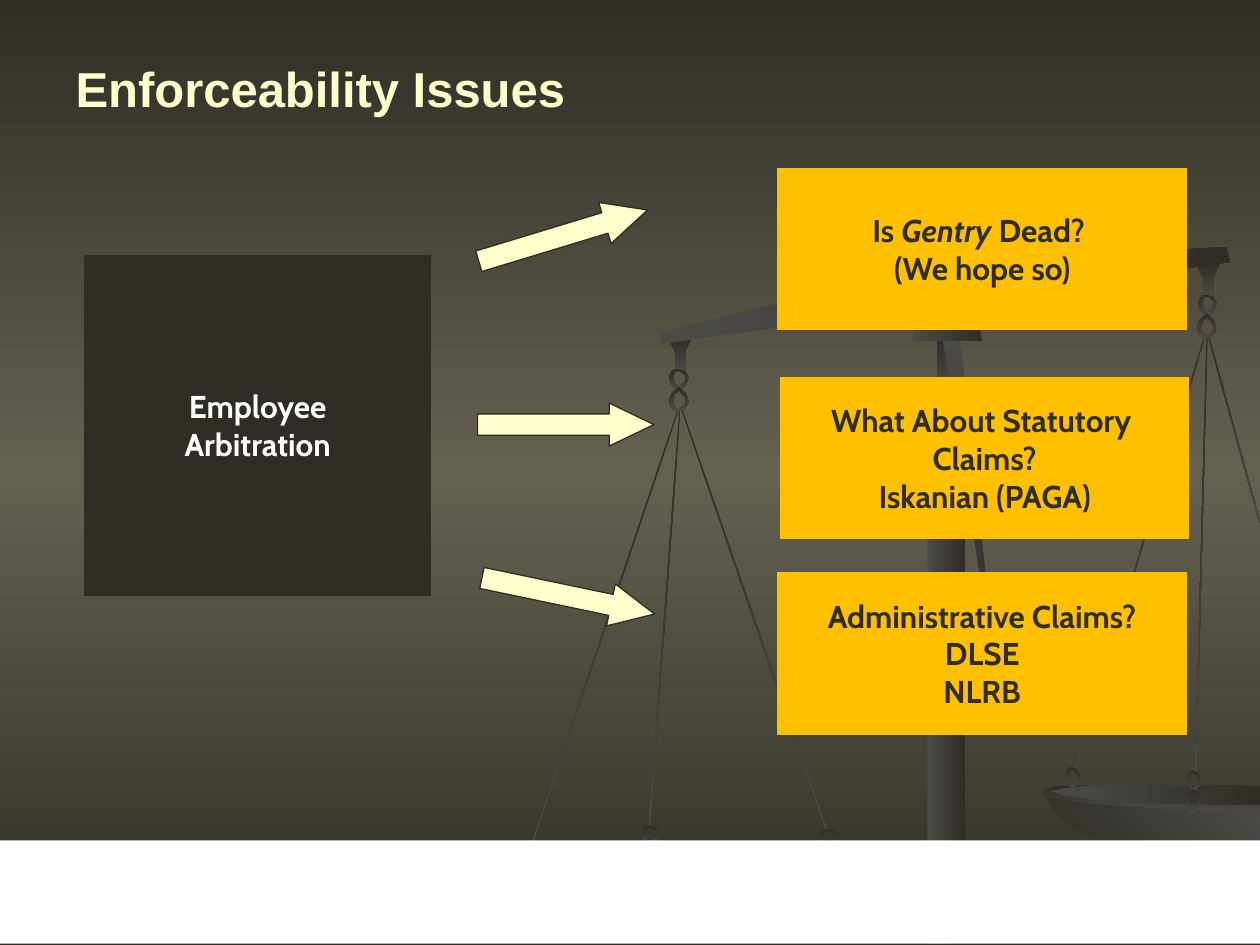
from copy import deepcopy
from dataclasses import dataclass
from typing import NamedTuple

from pptx import Presentation
from pptx.dml.color import RGBColor
from pptx.dml.fill import FillFormat
from pptx.enum.shapes import MSO_SHAPE
from pptx.enum.text import MSO_ANCHOR, PP_ALIGN
from pptx.oxml.ns import qn
from pptx.shapes.autoshape import Shape
from pptx.slide import Slide
from pptx.util import Inches, Pt

RECTANGLE = MSO_SHAPE.RECTANGLE
PROCESS = MSO_SHAPE.FLOWCHART_PROCESS
RIGHT_ARROW = MSO_SHAPE.RIGHT_ARROW
MIDDLE = MSO_ANCHOR.MIDDLE
CENTER = PP_ALIGN.CENTER
LEFT = PP_ALIGN.LEFT
TITLE_ONLY = 5


@dataclass(frozen=True)
class Theme:
    dark: RGBColor = RGBColor(0x2F, 0x2D, 0x25)
    olive: RGBColor = RGBColor(0x65, 0x61, 0x51)
    metal: RGBColor = RGBColor(0x4D, 0x4B, 0x48)
    cream: RGBColor = RGBColor(0xFF, 0xFF, 0xCC)
    amber: RGBColor = RGBColor(0xFF, 0xC0, 0x00)
    white: RGBColor = RGBColor(0xFF, 0xFF, 0xFF)
    title_font: str = "Arial"
    body_font: str = "Cabin"
    title_size: Pt = Pt(28)
    body_size: Pt = Pt(18)


THEME = Theme()
DARK_TO_METAL = (THEME.dark, THEME.metal)
METAL_TO_DARK = (THEME.metal, THEME.dark)
Contour = list[tuple[float, float]]


class Frame(NamedTuple):
    left: float
    top: float
    width: float
    height: float


class Bar(NamedTuple):
    frame: Frame
    rotation: float = 0


class Box(NamedTuple):
    frame: Frame
    lines: tuple[str, ...]
    fill: RGBColor
    text: RGBColor
    italic_word: str = ""


class Outline(NamedTuple):
    points: Contour
    colors: tuple[RGBColor, RGBColor]
    angle: float


STRINGS = [
    Bar(Frame(9.04, 2.6, 0.01, 3.6), 16.6),
    Bar(Frame(9.53, 2.66, 0.01, 3.47), 1.5),
    Bar(Frame(9.79, 2.64, 0.01, 1.53), 344.6),
    Bar(Frame(5.98, 3.15, 0.01, 3.53), 341),
    Bar(Frame(4.79, 3.16, 0.01, 3.68), 18.6),
    Bar(Frame(5.27, 3.25, 0.01, 3.31), 4.2),
]

# Contours in fractions of their frame
RING = [
    [(.5, 1), (.8, .76), (.95, .5), (1, .4), (.95, .3), (.75, .06), (.45, 0),
     (.25, 0), (.1, .12), (0, .4), (.1, .7), (.3, .88)],
    [(.5, .1), (.75, .24), (.85, .4), (.8, .55), (.5, .83), (.3, .7),
     (.2, .4), (.3, .12)],
]
FLIPPED_RING = [[(x, 1 - y) for x, y in contour] for contour in RING]
HANGER = [[(1, 0), (0, .07), (.28, .45), (.28, 1), (.72, 1), (.72, .42)]]
UPPER_LINKS = [
    Frame(8.46, 6.09, 0.11, 0.17), Frame(5.31, 2.93, 0.16, 0.17),
    Frame(9.51, 2.34, 0.15, 0.17), Frame(9.42, 6.12, 0.11, 0.17),
    Frame(5.09, 6.55, 0.15, 0.16), Frame(6.5, 6.58, 0.16, 0.17),
]
LOWER_LINKS = [Frame(5.31, 3.07, 0.16, 0.19), Frame(9.5, 2.49, 0.16, 0.19),
               Frame(9.41, 6.26, 0.12, 0.19)]
HANGERS = [Frame(5.31, 2.68, 0.18, 0.27), Frame(9.5, 2.09, 0.18, 0.27)]

PAN = [
    Outline([(9.58, 6.24), (8.65, 6.23), (8.36, 6.24), (8.27, 6.28), (8.32, 6.33),
             (8.52, 6.38), (8.94, 6.42), (9.35, 6.44), (10, 6.45), (10, 6.26)],
            DARK_TO_METAL, 90),
    Outline([(8.31, 6.33), (8.35, 6.42), (8.42, 6.49), (8.52, 6.57), (8.65, 6.63),
             (8.82, 6.68), (9.03, 6.72), (9.28, 6.74), (9.57, 6.75), (10, 6.74),
             (10, 6.43), (9.53, 6.43), (9.18, 6.42), (8.86, 6.4), (8.57, 6.37)],
            DARK_TO_METAL, 315),
    Outline([(9.56, 6.23), (8.69, 6.23), (8.43, 6.26), (8.34, 6.28), (8.43, 6.31),
             (8.63, 6.34), (8.93, 6.37), (9.33, 6.38), (10, 6.39), (10, 6.24)],
            METAL_TO_DARK, 0),
]
BEAM = Outline([(9.73, 1.96), (9.76, 2.08), (5.25, 2.73), (5.24, 2.64),
                (7.37, 2.12), (7.59, 2.09)], METAL_TO_DARK, 0)
POINTER = Outline([(7.91, 5.39), (7.5, 2.8), (7.48, 2.68), (7.6, 2.65),
                   (7.63, 2.77)], METAL_TO_DARK, 45)
CAP = Outline([(7.52, 2.47), (7.63, 2.48), (7.72, 2.53), (7.77, 2.6), (7.79, 2.71),
               (7.24, 2.71), (7.26, 2.6), (7.32, 2.53), (7.4, 2.48)],
              METAL_TO_DARK, 0)

ISSUE_SIZE = (3.25, 1.29)
BOXES = [
    Box(Frame(6.17, 1.33, *ISSUE_SIZE), ("Is Gentry Dead? ", "(We hope so)"),
        THEME.amber, THEME.dark, "Gentry"),
    Box(Frame(6.19, 2.99, *ISSUE_SIZE),
        ("What About Statutory ", "Claims?", "Iskanian (PAGA)"),
        THEME.amber, THEME.dark),
    Box(Frame(6.17, 4.54, *ISSUE_SIZE), ("Administrative Claims?", "DLSE", "NLRB"),
        THEME.amber, THEME.dark),
    Box(Frame(0.67, 2.02, 2.75, 2.71), ("Employee", "Arbitration"),
        THEME.dark, THEME.white),
]
ARROW_SIZE = (1.4, 0.34)
ARROWS = [Bar(Frame(3.77, 1.7, *ARROW_SIZE), 343.1),
          Bar(Frame(3.79, 3.2, *ARROW_SIZE)),
          Bar(Frame(3.81, 4.56, *ARROW_SIZE), 11.8)]


def fill_gradient(fill: FillFormat, colors: tuple[RGBColor, RGBColor], angle: float) -> None:
    """Fill with two colours; the angle runs clockwise."""
    fill.gradient()
    fill.gradient_angle = (360 - angle) % 360
    for stop, color in zip(fill.gradient_stops, colors):
        stop.color.rgb = color


def set_background(slide: Slide) -> None:
    """Run the gradient from dark to olive at mid-height and back to dark."""
    fill_gradient(slide.background.fill, (THEME.dark, THEME.olive), 90)
    stops = slide.element.find(".//" + qn("a:gsLst"))
    stops[1].set("pos", "50000")
    last_stop = deepcopy(stops[0])
    last_stop.set("pos", "100000")
    stops.append(last_stop)


def add_plain_shape(slide: Slide, kind: MSO_SHAPE, frame: Frame, rotation: float = 0) -> Shape:
    shape = slide.shapes.add_shape(kind, *map(Inches, frame))
    shape.rotation = rotation
    shape.shadow.inherit = False
    shape.line.fill.background()
    return shape


def add_solid_shape(slide: Slide, kind: MSO_SHAPE, frame: Frame, color: RGBColor,
                    rotation: float = 0) -> Shape:
    shape = add_plain_shape(slide, kind, frame, rotation)
    shape.fill.solid()
    shape.fill.fore_color.rgb = color
    return shape


def add_metal_bar(slide: Slide, bar: Bar, colors: tuple[RGBColor, RGBColor], angle: float) -> None:
    shape = add_plain_shape(slide, RECTANGLE, bar.frame, bar.rotation)
    fill_gradient(shape.fill, colors, angle)


def add_contours(slide: Slide, contours: list[Contour], colors: tuple[RGBColor, RGBColor],
                 angle: float) -> None:
    """Draw closed contours, in inches, as one shape; an inner contour is a hole."""
    scaled = [[(Inches(x), Inches(y)) for x, y in contour] for contour in contours]
    builder = slide.shapes.build_freeform(*scaled[0][0])
    for contour in scaled:
        builder.move_to(*contour[0])
        builder.add_line_segments(contour[1:], close=True)
    shape = builder.convert_to_shape()
    shape.shadow.inherit = False
    shape.line.fill.background()
    fill_gradient(shape.fill, colors, angle)


def add_fittings(slide: Slide, contours: list[Contour], frames: list[Frame]) -> None:
    for left, top, width, height in frames:
        placed = [[(left + x * width, top + y * height) for x, y in contour]
                  for contour in contours]
        add_contours(slide, placed, DARK_TO_METAL, 90)


def add_scales(slide: Slide) -> None:
    for string in STRINGS:
        add_metal_bar(slide, string, DARK_TO_METAL, 90)
    for outline in PAN:
        add_contours(slide, [outline.points], outline.colors, outline.angle)
    add_fittings(slide, HANGER, HANGERS)
    add_fittings(slide, RING, UPPER_LINKS)
    add_fittings(slide, FLIPPED_RING, LOWER_LINKS)
    add_contours(slide, [BEAM.points], BEAM.colors, BEAM.angle)
    add_metal_bar(slide, Bar(Frame(7.36, 3.08, 0.3, 4.41)), METAL_TO_DARK, 0)
    add_metal_bar(slide, Bar(Frame(7.44, 2.68, 0.13, 0.42)), DARK_TO_METAL, 90)
    for outline in (POINTER, CAP):
        add_contours(slide, [outline.points], outline.colors, outline.angle)


def add_box(slide: Slide, box: Box) -> None:
    text_frame = add_solid_shape(slide, PROCESS, box.frame, box.fill).text_frame
    text_frame.word_wrap = False
    text_frame.vertical_anchor = MIDDLE
    text_frame.text = "\n".join(box.lines)
    for paragraph in text_frame.paragraphs:
        paragraph.alignment = CENTER
        if box.italic_word and box.italic_word in paragraph.text:
            parts = paragraph.text.partition(box.italic_word)
            paragraph.text = parts[0]
            for part in parts[1:]:
                paragraph.add_run().text = part
        for run in paragraph.runs:
            run.font.name = THEME.body_font
            run.font.size = THEME.body_size
            run.font.bold = True
            run.font.italic = run.text == box.italic_word
            run.font.color.rgb = box.text


def add_arrow(slide: Slide, arrow: Bar) -> None:
    shape = add_solid_shape(slide, RIGHT_ARROW, arrow.frame, THEME.cream, arrow.rotation)
    shape.adjustments[1] = 1.04
    shape.line.color.rgb = THEME.dark
    shape.line.width = Pt(0.75)


def format_title(slide: Slide) -> None:
    title = slide.shapes.title
    title.left, title.top, title.width, title.height = map(Inches, (0.5, 0.3, 9, 1.25))
    text_frame = title.text_frame
    text_frame.text = "Enforceability Issues"
    text_frame.vertical_anchor = MIDDLE
    text_frame.margin_bottom = Inches(0.5)
    paragraph = text_frame.paragraphs[0]
    paragraph.alignment = LEFT
    font = paragraph.runs[0].font
    font.name, font.size, font.bold = THEME.title_font, THEME.title_size, True
    font.color.rgb = THEME.cream


def main() -> None:
    presentation = Presentation()
    presentation.slide_width, presentation.slide_height = Inches(10), Inches(7.5)
    slide = presentation.slides.add_slide(presentation.slide_layouts[TITLE_ONLY])
    set_background(slide)
    add_scales(slide)
    add_solid_shape(slide, RECTANGLE, Frame(0, 6.67, 10, 0.82), THEME.white)
    format_title(slide)
    for box in BOXES:
        add_box(slide, box)
    for arrow in ARROWS:
        add_arrow(slide, arrow)
    presentation.save("out.pptx")


if __name__ == "__main__":
    main()
